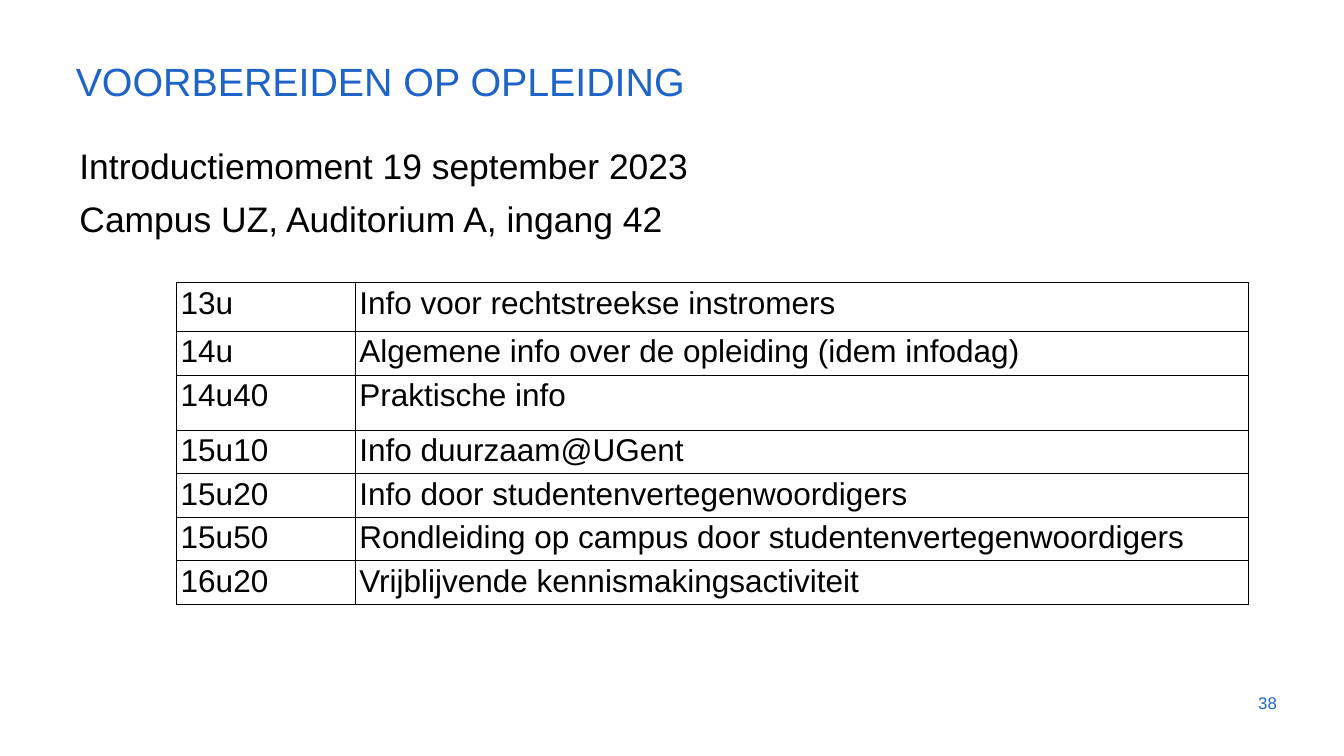
from lxml import etree
from pptx import Presentation, util as u
from pptx.dml.color import RGBColor
from pptx.enum import text
from pptx.oxml import ns

BLUE = RGBColor(0x1E, 0x64, 0xC8)
BLACK = RGBColor(0, 0, 0)
WHITE = RGBColor(255, 255, 255)

SCHEDULE = [
    ("13u", "Info voor rechtstreekse instromers"),
    ("14u", "Algemene info over de opleiding (idem infodag)"),
    ("14u40", "Praktische info"),
    ("15u10", "Info duurzaam@UGent"),
    ("15u20", "Info door studentenvertegenwoordigers"),
    ("15u50", "Rondleiding op campus door studentenvertegenwoordigers"),
    ("16u20", "Vrijblijvende kennismakingsactiviteit"),
]
ROW_HEIGHT = 5.62
TALL_ROWS = {0: 6.47, 2: 7.31}


def write(frame, *lines, size, color=BLACK, font="Arial", spacing=None,
          gap=0, align=text.PP_ALIGN.LEFT):
    for index, line in enumerate(lines):
        paragraph = frame.paragraphs[0] if index == 0 else frame.add_paragraph()
        paragraph.alignment = align
        if spacing:
            paragraph.line_spacing = spacing
        if index:
            paragraph.space_before = u.Pt(gap)
        run = paragraph.add_run()
        run.text = line
        run.font.name = font
        run.font.size = u.Pt(size)
        run.font.color.rgb = color


class SlideBuilder:
    def __init__(self, presentation):
        self.width = presentation.slide_width
        self.height = presentation.slide_height
        self.slide = presentation.slides.add_slide(presentation.slide_layouts[6])

    def across(self, percent):
        return u.Emu(round(self.width * percent / 100))

    def down(self, percent):
        return u.Emu(round(self.height * percent / 100))

    def text_box(self, left, top, width, height, *lines, inset=(0.1, 0.05),
                 anchor=text.MSO_ANCHOR.TOP, **style):
        shape = self.slide.shapes.add_textbox(
            self.across(left), self.down(top), self.across(width), self.down(height))
        frame = shape.text_frame
        frame.word_wrap = True
        frame.vertical_anchor = anchor
        frame.margin_left = frame.margin_right = u.Inches(inset[0])
        frame.margin_top = frame.margin_bottom = u.Inches(inset[1])
        write(frame, *lines, **style)

    def table(self, left, top, columns, rows, values, **style):
        shape = self.slide.shapes.add_table(
            len(rows), len(columns), self.across(left), self.down(top),
            self.across(sum(columns)), self.down(sum(rows)))
        table = shape.table
        table.first_row = table.horz_banding = False
        for column, width in zip(table.columns, columns):
            column.width = self.across(width)
        for row, height, row_values in zip(table.rows, rows, values):
            row.height = self.down(height)
            for cell, value in zip(row.cells, row_values):
                cell.margin_left = cell.margin_right = u.Inches(0.06)
                cell.margin_top = cell.margin_bottom = u.Inches(0.04)
                self.border(cell)
                cell.fill.solid()
                cell.fill.fore_color.rgb = WHITE
                write(cell.text_frame, value, **style)

    def border(self, cell, color=BLACK, width=1):
        properties = cell._tc.get_or_add_tcPr()
        for side in ("lnL", "lnR", "lnT", "lnB"):
            line = etree.SubElement(properties, ns.qn(f"a:{side}"), w=str(u.Pt(width)))
            fill = etree.SubElement(line, ns.qn("a:solidFill"))
            etree.SubElement(fill, ns.qn("a:srgbClr"), val=str(color))


def main():
    presentation = Presentation()
    presentation.slide_width = u.Inches(18.96)
    presentation.slide_height = u.Inches(10.67)
    builder = SlideBuilder(presentation)
    builder.text_box(5.12, 5.53, 90.6, 8.81, "VOORBEREIDEN OP OPLEIDING",
                     anchor=text.MSO_ANCHOR.BOTTOM, size=40, color=BLUE, spacing=0.9)
    builder.text_box(5.12, 17.34, 90.6, 68.6,
                     "Introductiemoment 19 september 2023",
                     "Campus UZ, Auditorium A, ingang 42",
                     inset=(0.15, 0.07), size=36, spacing=1.2, gap=2)
    rows = [TALL_ROWS.get(index, ROW_HEIGHT) for index in range(len(SCHEDULE))]
    builder.table(13.13, 37.39, [13.29, 66.46], rows, SCHEDULE, size=32)
    builder.text_box(90.19, 90.35, 5.33, 5.34, "38", anchor=text.MSO_ANCHOR.MIDDLE,
                     size=17.1, color=BLUE, align=text.PP_ALIGN.RIGHT)
    presentation.save("out.pptx")


if __name__ == "__main__":
    main()
